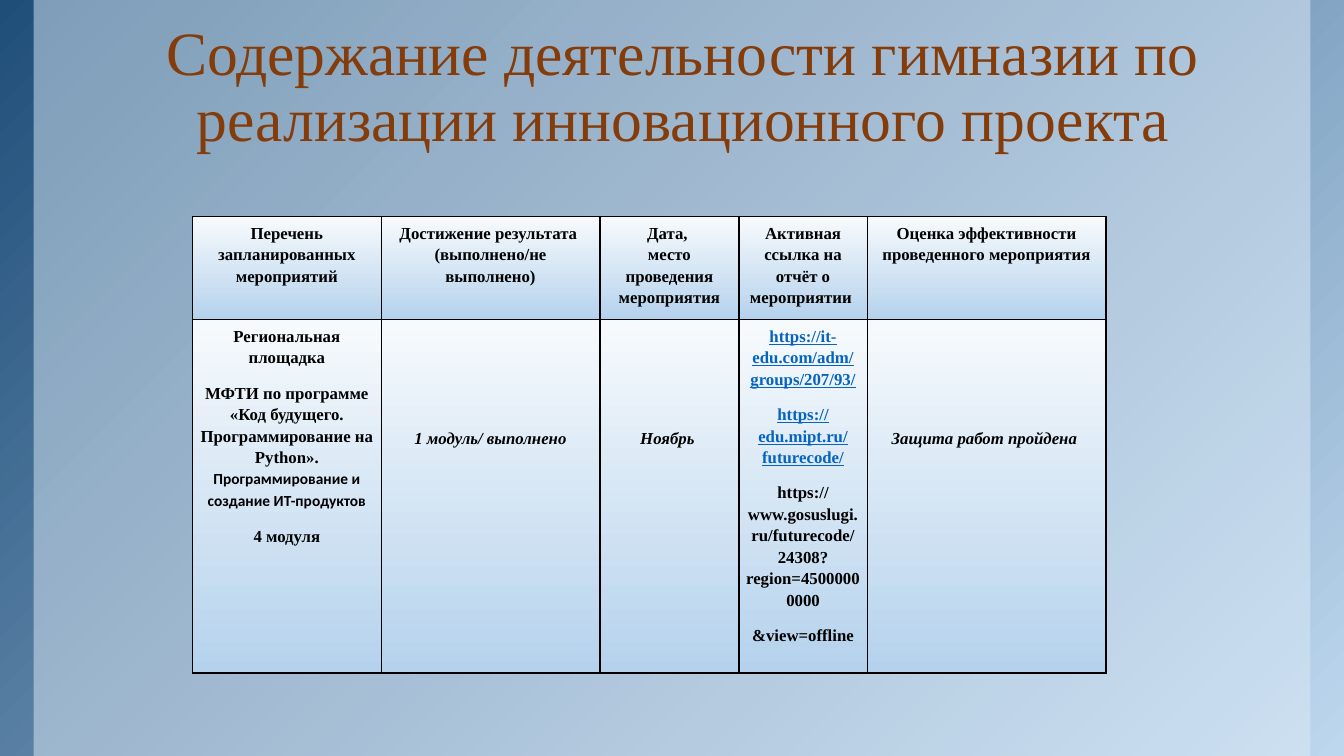
import pptx
import pptx.dml.color
import pptx.enum.shapes
import pptx.enum.text
import pptx.oxml
import pptx.oxml.ns
import pptx.util
import lxml.etree

HUES = {
    "navy": "1F4E79", "sky": "BDD7EE", "veil": "DEEBF7", "rust": "843C0B",
    "pale": "F7FAFD", "blue": "B5D2EC", "ink": "000000", "link": "0563C1",
}
SERIF = "Times New Roman"
CENTER = pptx.enum.text.PP_ALIGN.CENTER


def hue(name):
    return pptx.dml.color.RGBColor.from_string(HUES[name])


def write(para, text, size=12, font=SERIF, color="ink", bold=True, italic=False, line=False):
    run = para.add_run()
    run.text = text
    face = run.font
    face.size = pptx.util.Pt(size)
    face.name = font
    face.bold = bold
    face.italic = italic
    face.underline = line
    face.color.rgb = hue(color)


def blend(fill, start, end, angle):
    fill.gradient()
    fill.gradient_angle = angle
    for stop, name, place in zip(fill.gradient_stops, (start, end), (0, 1)):
        stop.color.rgb = hue(name)
        stop.position = place


class Deck:
    def __init__(self):
        self.show = pptx.Presentation()
        self.show.slide_width = pptx.util.Inches(13.333)
        self.show.slide_height = pptx.util.Inches(7.5)
        self.slide = self.show.slides.add_slide(self.show.slide_layouts[6])

    def wide(self, share):
        return round(self.show.slide_width * share / 100)

    def high(self, share):
        return round(self.show.slide_height * share / 100)

    def area(self, left, top, width, height):
        return self.wide(left), self.high(top), self.wide(width), self.high(height)

    def panel(self, *area):
        kind = pptx.enum.shapes.MSO_SHAPE.RECTANGLE
        shape = self.slide.shapes.add_shape(kind, *self.area(*area))
        shape.shadow.inherit = False
        shape.line.fill.background()
        return shape

    def veil(self, color, alpha, *area):
        shape = self.panel(*area)
        shape.fill.solid()
        shape.fill.fore_color.rgb = hue(color)
        tag = shape.fill._xPr.find(".//" + pptx.oxml.ns.qn("a:srgbClr"))
        lxml.etree.SubElement(tag, pptx.oxml.ns.qn("a:alpha"), val=str(alpha * 1000))

    def title(self, text, *area):
        frame = self.slide.shapes.add_textbox(*self.area(*area)).text_frame
        frame.word_wrap = True
        frame.vertical_anchor = pptx.enum.text.MSO_ANCHOR.BOTTOM
        frame.margin_left = frame.margin_right = pptx.util.Inches(0.13)
        frame.margin_top = frame.margin_bottom = pptx.util.Inches(0.07)
        para = frame.paragraphs[0]
        para.alignment = CENTER
        para.line_spacing = 0.9
        write(para, text, size=44, color="rust", bold=False)

    def border(self, cell):
        props = cell._tc.get_or_add_tcPr()
        for side in ("lnL", "lnR", "lnT", "lnB"):
            props.append(pptx.oxml.parse_xml(
                f'<a:{side} {pptx.oxml.ns.nsdecls("a")} w="12192"><a:solidFill>'
                f'<a:srgbClr val="{HUES["ink"]}"/></a:solidFill></a:{side}>'))

    def cell(self, cell, paras, after, top):
        cell.margin_left = cell.margin_right = pptx.util.Inches(0.07)
        cell.margin_top = pptx.util.Inches(top)
        cell.margin_bottom = pptx.util.Inches(0.05)
        self.border(cell)
        blend(cell.fill, "pale", "blue", 270)
        frame = cell.text_frame
        for i, runs in enumerate(paras):
            para = frame.add_paragraph() if i else frame.paragraphs[0]
            para.alignment = CENTER
            para.line_spacing = 1.15
            para.space_after = pptx.util.Pt(after)
            for text, style in runs:
                write(para, text, **style)

    def table(self, left, top, cols, rows, head, body, drops):
        area = self.area(left, top, sum(cols), sum(rows))
        grid = self.slide.shapes.add_table(len(rows), len(cols), *area).table
        grid.first_row = grid.horz_banding = False
        for col, share in zip(grid.columns, cols):
            col.width = self.wide(share)
        for row, share in zip(grid.rows, rows):
            row.height = self.high(share)
        for c, paras in enumerate(head):
            self.cell(grid.cell(0, c), paras, 0, 0.05)
        for c, (paras, drop) in enumerate(zip(body, drops)):
            self.cell(grid.cell(1, c), paras, 10, drop)


def plain(*texts, **style):
    return [[(text, style)] for text in texts]


HEAD = [
    plain("Перечень запланированных мероприятий"),
    plain("Достижение результата ", "(выполнено/не выполнено)"),
    plain("Дата, ", "место проведения мероприятия"),
    plain("Активная ссылка на отчёт о мероприятии "),
    plain("Оценка эффективности проведенного мероприятия"),
]
BODY = [
    plain("Региональная площадка")
    + [[("МФТИ по программе «Код будущего. Программирование на Python». ", {}),
        ("Программирование и создание ИТ-продуктов", {"size": 11, "font": "Calibri"})]]
    + plain("4 модуля"),
    plain("1 модуль/ выполнено", italic=True),
    plain("Ноябрь ", italic=True),
    plain("https://it-edu.com/adm/groups/207/93/", "https://edu.mipt.ru/futurecode/",
          color="link", line=True)
    + plain("https://www.gosuslugi.ru/futurecode/24308?region=45000000000", "&view=offline"),
    plain("Защита работ пройдена ", italic=True),
]


def main():
    deck = Deck()
    blend(deck.panel(0, 0, 100, 100).fill, "navy", "sky", 315)
    deck.veil("veil", 50, 2.5, 0, 95, 100)
    deck.title("Содержание деятельности гимназии по реализации инновационного проекта",
               9.15, 1.07, 83.35, 20.4)
    deck.table(14.33, 28.67, (14.03, 16.28, 10.35, 9.53, 17.78), (12.67, 43.73),
               HEAD, BODY, (0.05, 1.06, 1.06, 0.05, 1.06))
    deck.show.save("out.pptx")


if __name__ == "__main__":
    main()
